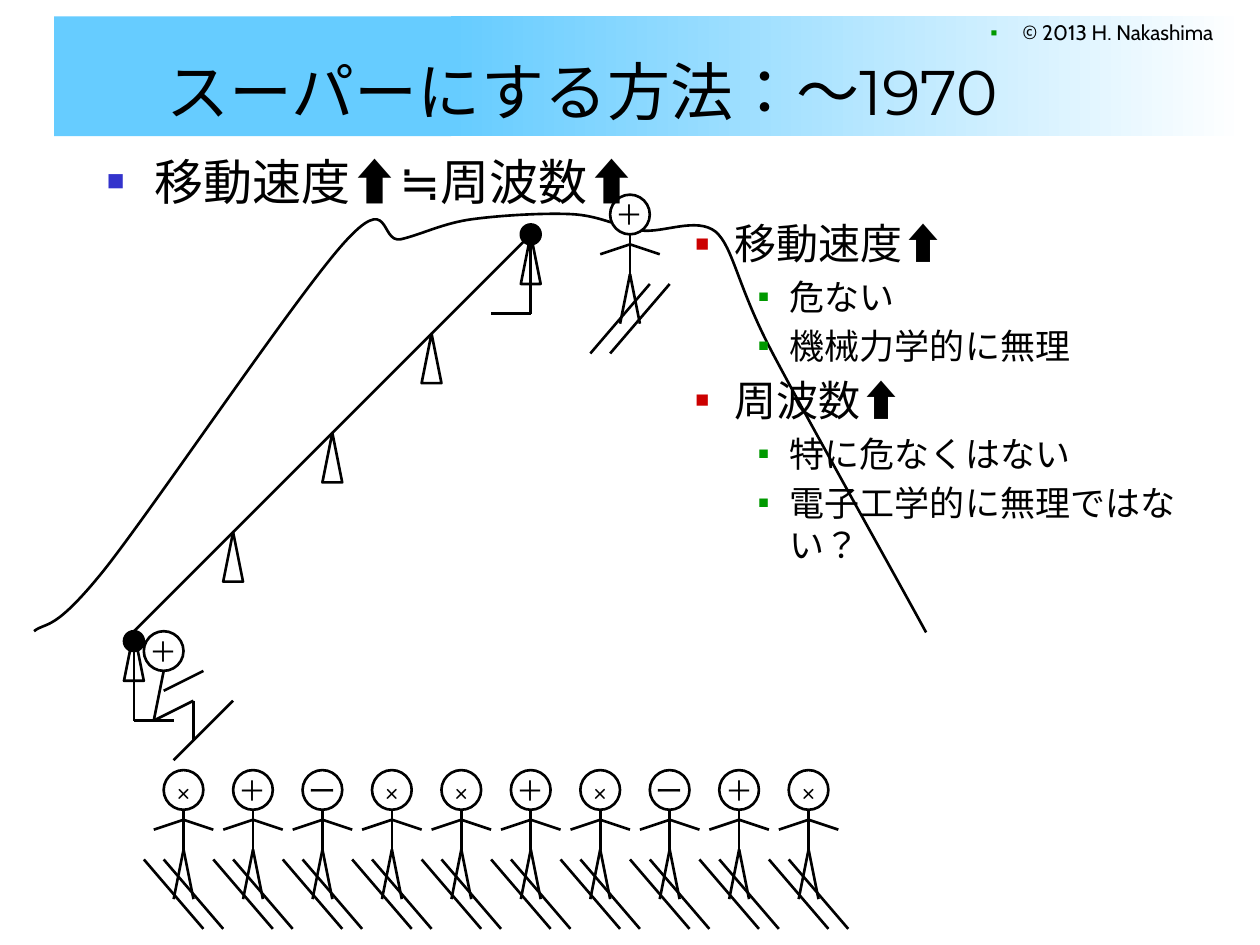
from dataclasses import dataclass

from lxml import etree
from pptx import Presentation
from pptx.dml.color import RGBColor
from pptx.enum.lang import MSO_LANGUAGE_ID
from pptx.enum.shapes import MSO_CONNECTOR, MSO_SHAPE
from pptx.enum.text import MSO_ANCHOR, MSO_AUTO_SIZE, PP_ALIGN
from pptx.oxml.ns import qn
from pptx.util import Inches, Mm, Pt

STRAIGHT = MSO_CONNECTOR.STRAIGHT
ELLIPSE, TRIANGLE, RECTANGLE = MSO_SHAPE.OVAL, MSO_SHAPE.ISOSCELES_TRIANGLE, MSO_SHAPE.RECTANGLE
LEFT, CENTER, RIGHT = PP_ALIGN.LEFT, PP_ALIGN.CENTER, PP_ALIGN.RIGHT
MIDDLE, BOTTOM = MSO_ANCHOR.MIDDLE, MSO_ANCHOR.BOTTOM
NO_AUTOFIT = MSO_AUTO_SIZE.NONE
JAPANESE = MSO_LANGUAGE_ID.JAPANESE


@dataclass(frozen=True)
class Theme:
    black: str = "000000"
    white: str = "FFFFFF"
    sky: str = "66CCFF"
    text_font: str = "Montserrat"
    head_font: str = "Quicksand"
    credit_font: str = "Cabin"
    title_size: int = 36
    head_size: int = 16
    credit_size: int = 12
    line_width: float = 1.5
    # Per outline level: type size, bullet colour, bullet percent, indent, hanging
    levels: tuple = (
        (28, "3333CC", 60, 0.38, 0.38),
        (24, "CC0000", 55, 0.81, 0.31),
        (20, "009900", 50, 1.25, 0.25),
    )


THEME = Theme()

# Drawing grid: square cells of 2 mm, counted from the foot of the mountain
CELL = 2
ORIGIN_X, ORIGIN_Y = 7, 1.25


def column(number):
    return Mm(ORIGIN_X + number * CELL)


def row(number):
    return Mm(ORIGIN_Y + number * CELL)


def color(value):
    return RGBColor.from_string(value)


def style_text(paragraph, font_name, size, alignment=LEFT):
    paragraph.alignment = alignment
    for run in paragraph.runs:
        run.font.name = font_name
        run.font.size = Pt(size)
        run.font.color.rgb = color(THEME.black)
        run.font.language_id = JAPANESE


def add_bullet(paragraph, level):
    _, bullet_color, percent, indent, hanging = THEME.levels[level]
    properties = paragraph._p.get_or_add_pPr()
    properties.set("marL", str(Inches(indent)))
    properties.set("indent", str(-Inches(hanging)))
    bullet = etree.SubElement(properties, qn("a:buClr"))
    etree.SubElement(bullet, qn("a:srgbClr"), val=bullet_color)
    etree.SubElement(properties, qn("a:buSzPct"), val=str(percent * 1000))
    etree.SubElement(properties, qn("a:buFont"), typeface="Arial")
    etree.SubElement(properties, qn("a:buChar"), char="■")


def add_outline(slide, box, items, wrap=True):
    """Bulleted text box; items are (level, text)."""
    frame = slide.shapes.add_textbox(*map(Inches, box)).text_frame
    frame.word_wrap = wrap
    for index, (level, text) in enumerate(items):
        paragraph = frame.add_paragraph() if index else frame.paragraphs[0]
        paragraph.text = text
        add_bullet(paragraph, level)
        size = THEME.levels[level][0]
        if index:
            paragraph.space_before = Pt(size * 0.2)
        style_text(paragraph, THEME.text_font, size)
    return frame


def outline_shape(shape):
    shape.shadow.inherit = False
    shape.line.color.rgb = color(THEME.black)
    shape.line.width = Pt(THEME.line_width)


def add_figure(shapes, kind, left, top, width, height, fill):
    """Outlined preset shape in grid cells."""
    shape = shapes.add_shape(kind, column(left), row(top), Mm(width * CELL), Mm(height * CELL))
    outline_shape(shape)
    shape.fill.solid()
    shape.fill.fore_color.rgb = color(fill)
    return shape


def add_line(shapes, start, end):
    line = shapes.add_connector(STRAIGHT, column(start[0]), row(start[1]), column(end[0]), row(end[1]))
    line.line.color.rgb = color(THEME.black)
    line.line.width = Pt(THEME.line_width)
    etree.SubElement(line._element.spPr, qn("a:effectLst"))


def add_head(shapes, center, top, sign):
    head = add_figure(shapes, ELLIPSE, center - 2, top, 4, 4, THEME.white)
    frame = head.text_frame
    frame.text = sign
    frame.word_wrap = False
    frame.vertical_anchor = MIDDLE
    style_text(frame.paragraphs[0], THEME.head_font, THEME.head_size, CENTER)


def add_skier(shapes, center, top, sign, facing=1):
    """Standing skier; facing is 1 for right and -1 for left."""
    add_head(shapes, center, top, sign)
    limbs = (
        ((0, 4), (0, 8)),                       # body
        ((0, 8), (-1, 13)), ((0, 8), (1, 13)),  # legs
        ((-3, 6), (0, 5)), ((3, 6), (0, 5)),    # arms
        ((-4, 9), (2, 16)), ((-2, 9), (4, 16)),  # skis
    )
    for start, end in limbs:
        add_line(shapes, *((center + facing * x, top + y) for x, y in (start, end)))


def add_chair(shapes, center, middle, side):
    """Lift chair hanging from a ball; the seat points to the given side."""
    add_figure(shapes, ELLIPSE, center - 1, middle - 1, 2, 2, THEME.black)
    add_line(shapes, (center, middle), (center, middle + 8))
    add_line(shapes, (center, middle + 8), (center + 4 * side, middle + 8))


def add_seated_skier(shapes):
    add_head(shapes, 13, 63, "＋")
    for start, end in (((13, 67), (12, 72)), ((12, 72), (16, 70)), ((16, 70), (16, 74)),
                       ((14, 76), (20, 70)), ((13, 69), (17, 67))):
        add_line(shapes, start, end)


def add_mountain(slide):
    """Ridge in inches: each row holds two control points and an end point."""
    segments = (
        ((0.37, 4.93), (0.42, 5.03), (0.83, 4.52)),
        ((1.24, 4), (2.33, 2.38), (2.72, 1.94)),
        ((3.11, 1.5), (3.01, 1.93), (3.18, 1.9)),
        ((3.35, 1.86), (3.52, 1.77), (3.75, 1.74)),
        ((3.97, 1.71), (4.31, 1.69), (4.53, 1.7)),
        ((4.76, 1.71), (4.9, 1.8), (5.09, 1.83)),
        ((5.27, 1.85), (5.53, 1.72), (5.68, 1.84)),
        ((5.82, 1.96), (5.85, 2.27), (6.13, 2.8)),
        ((6.41, 3.33), (7.1, 4.56), (7.35, 5.02)),
    )
    builder = slide.shapes.build_freeform(Inches(0.27), Inches(5.01))
    builder.add_line_segments([(Inches(x), Inches(y)) for segment in segments for x, y in segment],
                              close=False)
    ridge = builder.convert_to_shape()
    # Join every three straight steps into one curve
    steps = list(ridge._element.iter(qn("a:lnTo")))
    for index in range(0, len(steps), 3):
        curve = etree.SubElement(steps[index].getparent(), qn("a:cubicBezTo"))
        for step in steps[index:index + 3]:
            curve.append(step[0])
            step.getparent().remove(step)
    outline_shape(ridge)
    ridge.fill.background()


def add_header(slide):
    # Band: fading part, then solid part
    fading, solid = (slide.shapes.add_shape(RECTANGLE, Inches(left), Inches(0.13), Inches(width), Inches(0.95))
                     for left, width in ((3.58, 6.3), (0.43, 3.15)))
    for band in (fading, solid):
        band.shadow.inherit = False
        band.line.fill.background()
    fading.fill.gradient()
    fading.fill.gradient_angle = 0
    for stop, value in zip(fading.fill.gradient_stops, (THEME.sky, THEME.white)):
        stop.color.rgb = color(value)
    solid.fill.solid()
    solid.fill.fore_color.rgb = color(THEME.sky)

    # Copyright line
    credit = add_outline(slide, (6.56, 0.13, 3.17, 0.31), [(2, "© 2013 H. Nakashima")])
    credit.paragraphs[0].line_spacing = 0.9
    style_text(credit.paragraphs[0], THEME.credit_font, THEME.credit_size, RIGHT)

    # Title, brought in front of the band
    title = slide.shapes.title
    title.left, title.top, title.width, title.height = map(Inches, (1.22, 0.13, 8.51, 0.94))
    title.element.getparent().append(title.element)
    frame = title.text_frame
    frame.text = "スーパーにする方法：～1970"
    frame.auto_size = NO_AUTOFIT
    frame.vertical_anchor = BOTTOM
    style_text(frame.paragraphs[0], THEME.text_font, THEME.title_size)


def main():
    presentation = Presentation()
    presentation.slide_width, presentation.slide_height = Inches(10), Inches(7.5)
    slide = presentation.slides.add_slide(presentation.slide_layouts[5])
    add_header(slide)

    # Lift cable and towers
    add_line(slide.shapes, (10, 63), (50, 23))
    for index in range(5):
        add_figure(slide.shapes, TRIANGLE, 49 - 10 * index, 23 + 10 * index, 2, 5, THEME.white)

    # Chairs, mountain and skiers
    boarding = slide.shapes.add_group_shape().shapes
    add_chair(boarding, 10, 64, 1)
    add_seated_skier(boarding)
    add_mountain(slide)
    add_chair(slide.shapes.add_group_shape().shapes, 50, 23, -1)
    add_skier(slide.shapes.add_group_shape().shapes, 60, 19, "＋", facing=-1)
    queue = slide.shapes.add_group_shape().shapes
    for index, sign in enumerate("×＋ー××＋×ー＋×"):
        add_skier(queue, 15 + 7 * index, 77, sign)

    # Statements
    add_outline(slide, (0.75, 1.15, 4.41, 0.55), [(0, "移動速度⬆≒周波数⬆")])
    add_outline(slide, (4.92, 1.68, 4.8, 4.27), [
        (1, "移動速度⬆"), (2, "危ない"), (2, "機械力学的に無理"),
        (1, "周波数⬆"), (2, "特に危なくはない"), (2, "電子工学的に無理ではない？"),
    ], wrap=False)

    presentation.save("out.pptx")


if __name__ == "__main__":
    main()
